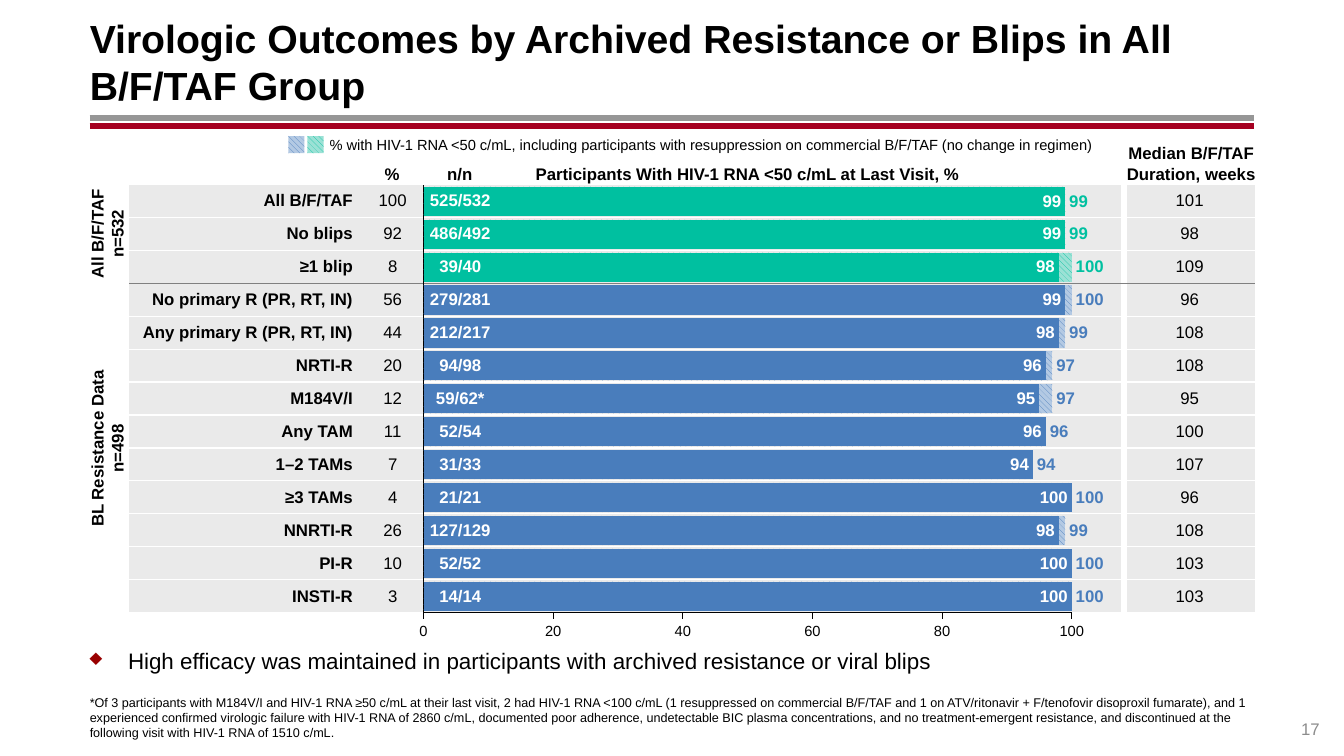
"""Build the slide on virologic outcomes by archived resistance or blips."""
from lxml import etree
from pptx import Presentation
from pptx.chart.data import CategoryChartData
from pptx.dml.color import RGBColor
from pptx.enum.chart import XL_CHART_TYPE, XL_LABEL_POSITION, XL_TICK_LABEL_POSITION, XL_TICK_MARK
from pptx.enum.dml import MSO_PATTERN
from pptx.enum.shapes import MSO_CONNECTOR, MSO_SHAPE
from pptx.enum.text import MSO_ANCHOR, MSO_AUTO_SIZE, PP_ALIGN
from pptx.oxml import parse_xml
from pptx.oxml.ns import nsdecls, qn
from pptx.util import Inches, Pt

LEFT, CENTER, RIGHT = PP_ALIGN.LEFT, PP_ALIGN.CENTER, PP_ALIGN.RIGHT
TOP, MIDDLE, BOTTOM = MSO_ANCHOR.TOP, MSO_ANCHOR.MIDDLE, MSO_ANCHOR.BOTTOM
NO_AUTOSIZE = MSO_AUTO_SIZE.NONE
STRAIGHT, RECT = MSO_CONNECTOR.STRAIGHT, MSO_SHAPE.RECTANGLE
DIAGONAL = MSO_PATTERN.WIDE_DOWNWARD_DIAGONAL
BAR = XL_CHART_TYPE.BAR_CLUSTERED
OUT_END, IN_END = XL_LABEL_POSITION.OUTSIDE_END, XL_LABEL_POSITION.INSIDE_END
NO_LABELS = XL_TICK_LABEL_POSITION.NONE
NO_TICK, TICK_OUT = XL_TICK_MARK.NONE, XL_TICK_MARK.OUTSIDE
PLAIN_TABLE = "{2D5ABB26-0587-4C30-8999-92F81FD0307C}"

BLACK, WHITE, GRAY, BAND = "000000", "FFFFFF", "808080", "EAEAEA"
BLUE, PALE_BLUE, GREEN, PALE_GREEN = "497DBC", "B3C9E3", "00C0A0", "9BE1D5"

ROWS = [
    ("All B/F/TAF", 100, "525/532", 99, 99, 101),
    ("No blips", 92, "486/492", 99, 99, 98),
    ("≥1 blip", 8, "39/40", 98, 100, 109),
    ("No primary R (PR, RT, IN)", 56, "279/281", 99, 100, 96),
    ("Any primary R (PR, RT, IN)", 44, "212/217", 98, 99, 108),
    ("NRTI-R", 20, "94/98", 96, 97, 108),
    ("M184V/I", 12, "59/62*", 95, 97, 95),
    ("Any TAM", 11, "52/54", 96, 96, 100),
    ("1–2 TAMs", 7, "31/33", 94, 94, 107),
    ("≥3 TAMs", 4, "21/21", 100, 100, 96),
    ("NNRTI-R", 26, "127/129", 98, 99, 108),
    ("PI-R", 10, "52/52", 100, 100, 103),
    ("INSTI-R", 3, "14/14", 100, 100, 103),
]
GROUP_ROWS = 3


def rgb(value):
    return RGBColor.from_string(value)


class Deck:
    font = "Arial"

    def __init__(self, prs):
        self.s = prs.slides.add_slide(prs.slide_layouts[5])

    def style(self, font, size, color=BLACK, bold=False):
        font.name, font.size, font.bold = self.font, Pt(size), bold
        font.color.rgb = rgb(color)

    def add_lines(self, tf, lines, size, color=BLACK, bold=False, align=LEFT):
        for i, line in enumerate(lines):
            p = tf.add_paragraph() if i else tf.paragraphs[0]
            p.alignment = align
            r = p.add_run()
            r.text = line
            self.style(r.font, size, color, bold)

    def frame(self, sp, box, anchor, ins):
        sp.left, sp.top, sp.width, sp.height = map(Inches, box)
        tf = sp.text_frame
        tf.word_wrap, tf.auto_size, tf.vertical_anchor = True, NO_AUTOSIZE, anchor
        tf.margin_left = tf.margin_right = Inches(ins[0])
        tf.margin_top = tf.margin_bottom = Inches(ins[1])
        return tf

    def title(self, box, text, size):
        tf = self.frame(self.s.shapes.title, box, MIDDLE, (0, 0.05))
        self.add_lines(tf, [text], size, bold=True)

    def text(self, box, lines, size, color=BLACK, bold=False, align=LEFT,
             anchor=MIDDLE, ins=(0, 0), rotation=0):
        sp = self.s.shapes.add_textbox(*map(Inches, box))
        sp.rotation = rotation
        tf = self.frame(sp, box, anchor, ins)
        self.add_lines(tf, lines, size, color, bold, align)
        return tf

    def bullet(self, box, text, size, mark, color):
        p = self.text(box, [text], size, anchor=TOP, ins=(0, 0.05)).paragraphs[0]
        p.space_before = Pt(9)
        pPr = p._p.get_or_add_pPr()
        pPr.set("marL", str(Inches(0.38)))
        pPr.set("indent", str(-Inches(0.38)))
        clr = etree.SubElement(pPr, qn("a:buClr"))
        etree.SubElement(clr, qn("a:srgbClr"), val=color)
        etree.SubElement(pPr, qn("a:buChar"), char=mark)

    def rule(self, x1, x2, y, color, width):
        c = self.s.shapes.add_connector(STRAIGHT, *map(Inches, (x1, y, x2, y)))
        c.line.color.rgb, c.line.width = rgb(color), Pt(width)
        etree.SubElement(c._element.spPr, qn("a:effectLst"))

    def hatch(self, fill, fore, back):
        fill.patterned()
        fill.pattern = DIAGONAL
        fill.fore_color.rgb, fill.back_color.rgb = rgb(fore), rgb(back)

    def swatch(self, box, fore, back):
        sp = self.s.shapes.add_shape(RECT, *map(Inches, box))
        sp.shadow.inherit = False
        sp.line.fill.background()
        self.hatch(sp.fill, fore, back)

    def table(self, box, widths, rows):
        frame = self.s.shapes.add_table(len(rows), len(widths), *map(Inches, box))
        tb = frame.table
        tb.first_row = tb.horz_banding = False
        tb._tbl.tblPr.find(qn("a:tableStyleId")).text = PLAIN_TABLE
        for col, width in zip(tb.columns, widths):
            col.width = Inches(width)
        for i, row in enumerate(rows):
            for j, item in enumerate(row):
                yield i, j, tb.cell(i, j), item

    def cell(self, cell, text, fill=None, borders=(), **style):
        cell.margin_left = cell.margin_right = cell.margin_top = cell.margin_bottom = 0
        cell.vertical_anchor = MIDDLE
        if text:
            self.add_lines(cell.text_frame, [text], 12, **style)
        tcPr = cell._tc.get_or_add_tcPr()
        for side, color, width in borders:
            ln = etree.SubElement(tcPr, qn("a:ln" + side), w=str(Pt(width)))
            solid = etree.SubElement(ln, qn("a:solidFill"))
            etree.SubElement(solid, qn("a:srgbClr"), val=color)
        if fill:
            cell.fill.solid()
            cell.fill.fore_color.rgb = rgb(fill)
        else:
            cell.fill.background()

    def chart(self, box, cats, series, layout):
        data = CategoryChartData()
        data.categories = cats
        for name, values in series:
            data.add_series(name, values)
        chart = self.s.shapes.add_chart(BAR, *map(Inches, box), data).chart
        chart.has_legend = chart.has_title = False
        self.style(chart.font, 10)
        plot = chart.plots[0]
        plot.gap_width, plot.overlap, plot.vary_by_categories = 13, 100, False
        cat, val = chart.category_axis, chart.value_axis
        cat.tick_label_position, cat.major_tick_mark = NO_LABELS, NO_TICK
        val.minimum_scale, val.maximum_scale, val.major_unit = 0, 100, 20
        val.major_tick_mark = TICK_OUT
        self.style(val.tick_labels.font, 10.5)
        for axis in (cat, val):
            axis.has_major_gridlines = False
            axis.minor_tick_mark = NO_TICK
            axis.format.line.color.rgb, axis.format.line.width = rgb(BLACK), Pt(0.75)
        self.clear_back(chart, layout)
        return plot.series

    def clear_back(self, chart, layout):
        spPr = f'<c:spPr {nsdecls("c", "a")}><a:noFill/><a:ln><a:noFill/></a:ln></c:spPr>'
        body = chart._chartSpace.find(qn("c:chart"))
        body.addnext(parse_xml(spPr))
        area = body.find(qn("c:plotArea"))
        area.append(parse_xml(spPr))
        for old in area.findall(qn("c:layout")):
            area.remove(old)
        sizes = "".join(f'<c:{k} val="{v}"/>' for k, v in zip("xywh", layout))
        area.insert(0, parse_xml(
            f'<c:layout {nsdecls("c")}><c:manualLayout><c:layoutTarget val="inner"/>'
            f'<c:xMode val="edge"/><c:yMode val="edge"/>{sizes}</c:manualLayout></c:layout>'))

    def labels(self, label, position, color):
        label.position = position
        self.style(label.font, 12, color, True)


def main():
    prs = Presentation()
    prs.slide_width, prs.slide_height = Inches(13.33), Inches(7.5)
    d = Deck(prs)
    d.rule(0.89, 12.44, 1.17, "969696", 4.25)
    d.rule(0.89, 12.44, 1.25, "A50021", 4.25)

    outcomes = [(name, str(pct), "", "", str(weeks)) for name, pct, _, _, _, weeks in ROWS]
    for i, j, cell, text in d.table((1.28, 1.83, 11.17, 4.25), (2.22, 0.79, 0.77, 6.09, 1.3), outcomes):
        borders = [("L", WHITE, 4.5)] if j == 4 else [("R", WHITE, 4.5)] if j == 3 else []
        borders += [("T", GRAY if i == GROUP_ROWS else WHITE, 1),
                    ("B", GRAY if i == GROUP_ROWS - 1 else WHITE, 1)]
        d.cell(cell, text, BAND, borders, bold=j == 0, align=CENTER if j else RIGHT)

    d.title((0.89, 0.18, 11.55, 0.86),
            "Virologic Outcomes by Archived Resistance or Blips in All B/F/TAF Group", 28)
    d.bullet((0.89, 6.37, 11.47, 0.43), "High efficacy was maintained in participants with "
             "archived resistance or viral blips", 16, "♦", "990000")
    d.text((12.44, 6.93, 0.65, 0.4), ["17"], 12, "8C8C8C", align=RIGHT, anchor=BOTTOM)

    bars = ROWS[::-1]
    total, last = d.chart((3.9, 1.77, 7.34, 4.59), [str(n + 1) for n in range(len(bars))],
                          [("Series 1", [row[4] for row in bars]),
                           ("Series 2", [row[3] for row in bars])], (0.041, 0.014, 0.876, 0.925))
    d.hatch(total.format.fill, BLUE, PALE_BLUE)
    last.format.fill.solid()
    last.format.fill.fore_color.rgb = rgb(BLUE)
    for ser, position, color in ((total, OUT_END, BLUE), (last, IN_END, WHITE)):
        ser.data_labels.show_value = True
        d.labels(ser.data_labels, position, color)
    for n in range(len(bars) - GROUP_ROWS, len(bars)):
        d.hatch(total.points[n].format.fill, GREEN, PALE_GREEN)
        d.labels(total.points[n].data_label, OUT_END, GREEN)
        fill = last.points[n].format.fill
        fill.solid()
        fill.fore_color.rgb = rgb(GREEN)

    for box, text in (((4.31, 1.62, 6.21, 0.2), "Participants With HIV-1 RNA <50 c/mL at Last Visit, %"),
                      ((3.56, 1.62, 0.66, 0.2), "%"),
                      ((4.23, 1.62, 0.66, 0.2), "n/n"),
                      ((11.16, 1.42, 1.31, 0.4), "Median B/F/TAF Duration, weeks")):
        d.text(box, [text], 12, bold=True, align=CENTER)
    for box, lines in (((0.51, 2.07, 1.1, 0.5), ["All B/F/TAF", "n=532"]),
                       ((-0.57, 4.2, 3.26, 0.5), ["BL Resistance Data", "n=498"])):
        d.text(box, lines, 12, bold=True, align=CENTER, anchor=BOTTOM, ins=(0, 0.05), rotation=270)

    d.text((0.89, 6.82, 11.59, 0.52), [
        "*Of 3 participants with M184V/I and HIV-1 RNA ≥50 c/mL at their last visit, 2 had HIV-1 RNA "
        "<100 c/mL (1 resuppressed on commercial B/F/TAF and 1 on ATV/ritonavir + F/tenofovir disoproxil "
        "fumarate), and 1 experienced confirmed virologic failure with HIV-1 RNA of 2860 c/mL, documented "
        "poor adherence, undetectable BIC plasma concentrations, and no treatment-emergent resistance, and "
        "discontinued at the following visit with HIV-1 RNA of 1510 c/mL."], 9, anchor=BOTTOM)

    d.swatch((2.86, 1.35, 0.16, 0.17), BLUE, PALE_BLUE)
    d.swatch((3.05, 1.35, 0.16, 0.17), GREEN, PALE_GREEN)
    d.text((3.17, 1.26, 8.23, 0.35), ["% with HIV-1 RNA <50 c/mL, including participants with "
           "resuppression on commercial B/F/TAF (no change in regimen)"], 10.5, ins=(0.1, 0.05))

    for _, _, cell, text in d.table((4.07, 1.83, 0.99, 4.25), (0.99,), [(row[2],) for row in ROWS]):
        d.cell(cell, text, color=WHITE, bold=True, align=CENTER)
    prs.save("out.pptx")


if __name__ == "__main__":
    main()
